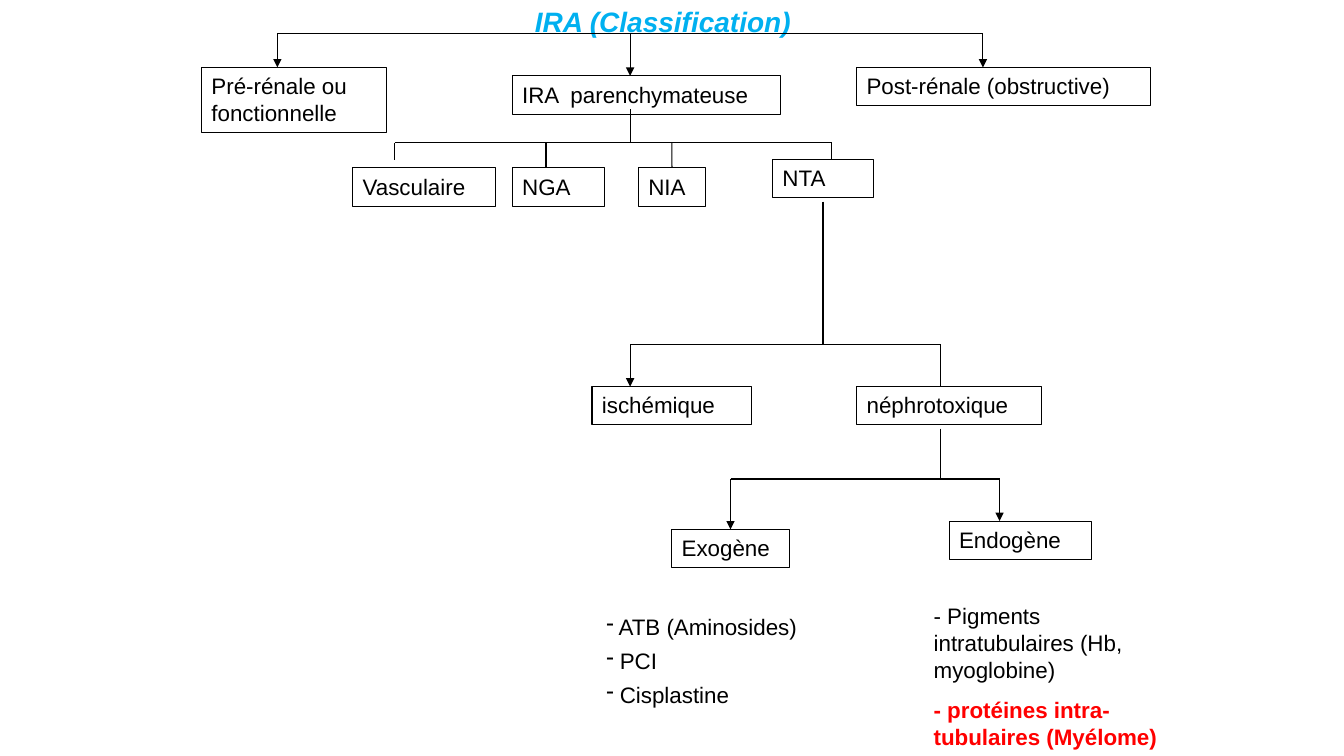
from dataclasses import dataclass

import pptx
import pptx.dml.color
import pptx.enum.shapes
import pptx.enum.text
import pptx.oxml
import pptx.util
from pptx.util import Cm

COLORS = {"black": "000000", "title": "00B0F0", "alert": "FF0000"}
LINE_HEIGHT = 0.97


@dataclass
class Branch:
    """A labelled box and its drop line, in cm relative to the region."""

    label: str
    left: float
    top: float
    width: float
    drop: float
    arrow: bool = True
    height: float = LINE_HEIGHT
    gap: float = 0


def rgb(name):
    """Return the named colour."""
    return pptx.dml.color.RGBColor.from_string(COLORS[name])


def style_paragraph(paragraph, color="black", size=16, bold=False, italic=False):
    """Set the font and left alignment of a paragraph."""
    paragraph.alignment = pptx.enum.text.PP_ALIGN.LEFT
    font = paragraph.font
    font.name = "Arial"
    font.size = pptx.util.Pt(size)
    font.bold = bold
    font.italic = italic
    font.color.rgb = rgb(color)


def prepare_frame(shape):
    """Wrap and top-anchor the text of a shape, and return its frame."""
    frame = shape.text_frame
    frame.word_wrap = True
    frame.auto_size = pptx.enum.text.MSO_AUTO_SIZE.SHAPE_TO_FIT_TEXT
    frame.vertical_anchor = pptx.enum.text.MSO_ANCHOR.TOP
    return frame


def add_text(slide, left, top, width, height, lines):
    """Add a text box of (text, style) lines and return its paragraphs."""
    shape = slide.shapes.add_textbox(Cm(left), Cm(top), Cm(width), Cm(height))
    frame = prepare_frame(shape)
    for index, (text, style) in enumerate(lines):
        paragraph = frame.add_paragraph() if index else frame.paragraphs[0]
        paragraph.text = text
        style_paragraph(paragraph, **style)
        if index:
            paragraph.space_before = pptx.util.Pt(9)
    return frame.paragraphs


def add_box(slide, left, top, width, height, label):
    """Add an outlined rectangle with a label."""
    shape = slide.shapes.add_shape(
        pptx.enum.shapes.MSO_SHAPE.RECTANGLE, Cm(left), Cm(top), Cm(width), Cm(height))
    shape.shadow.inherit = False
    shape.fill.background()
    shape.line.color.rgb = rgb("black")
    shape.line.width = pptx.util.Pt(0.75)
    frame = prepare_frame(shape)
    frame.text = label
    style_paragraph(frame.paragraphs[0])
    return shape


def add_line(slide, x1, y1, x2, y2, arrow=False):
    """Add a thin black line, with an arrowhead at its end if asked."""
    line = slide.shapes.add_connector(
        pptx.enum.shapes.MSO_CONNECTOR.STRAIGHT, Cm(x1), Cm(y1), Cm(x2), Cm(y2))
    line.line.color.rgb = rgb("black")
    line.line.width = pptx.util.Pt(0.75)
    properties = line._element.spPr
    if arrow:
        outline = line.line._get_or_add_ln()
        pptx.oxml.xmlchemy.OxmlElement("a:tailEnd")
        head = pptx.oxml.xmlchemy.OxmlElement("a:tailEnd")
        head.set("type", "triangle")
        outline.append(head)
    properties.append(pptx.oxml.xmlchemy.OxmlElement("a:effectLst"))
    return line


def add_fork(slide, left, top, bar, branches, stem=None):
    """Draw a stem, a bar at the given depth, and the branches below it."""
    if stem is not None:
        add_line(slide, left + stem, top, left + stem, top + bar)
    drops = [branch.drop for branch in branches]
    add_line(slide, left + min(drops), top + bar, left + max(drops), top + bar)
    for branch in branches:
        box = add_box(slide, left + branch.left, top + branch.top,
                      branch.width, branch.height, branch.label)
        x = left + branch.drop
        line = add_line(slide, x, top + bar, x, top + branch.top - branch.gap, branch.arrow)
        if abs(branch.left + branch.width / 2 - branch.drop) < 0.02:
            line.end_connect(box, 0)


def add_title(slide, left, top, width, height):
    """Place the slide title."""
    style = {"color": "title", "size": 20, "bold": True, "italic": True}
    add_text(slide, left, top, width, height, [("IRA (Classification)", style)])


def add_main_types(slide, left, top):
    """Place the three main types of renal failure."""
    add_fork(slide, left, top, 0, [
        Branch("Pré-rénale ou fonctionnelle", 0, 0.85, 4.66, 1.91, height=1.65),
        Branch("IRA  parenchymateuse", 7.83, 1.06, 6.77, 10.8),
        Branch("Post-rénale (obstructive)", 16.51, 0.85, 7.41, 19.69),
    ])


def add_parenchymal_types(slide, left, top):
    """Place the four parenchymal types."""
    add_fork(slide, left, top, 0.85, [
        Branch("Vasculaire", 0, 1.48, 3.6, 1.06, False, gap=0.21),
        Branch("NGA", 4.02, 1.48, 2.33, 4.87, False),
        Branch("NIA", 7.2, 1.48, 1.69, 8.04, False),
        Branch("NTA", 10.58, 1.27, 2.54, 12.07, False),
    ], stem=6.99)


def add_tubular_causes(slide, left, top):
    """Place the two causes of tubular necrosis."""
    add_fork(slide, left, top, 3.6, [
        Branch("ischémique", 0, 4.66, 4.02, 0.96),
        Branch("néphrotoxique", 6.67, 4.66, 4.66, 8.79, False),
    ], stem=5.82)


def add_nephrotoxic_sources(slide, left, top):
    """Place the nephrotoxic sources with their lists of agents."""
    add_fork(slide, left, top, 1.27, [
        Branch("Exogène", 1.9, 2.54, 2.96, 3.38),
        Branch("Endogène", 8.89, 2.33, 3.6, 10.16),
    ], stem=8.68)
    agents = [(text, {}) for text in (" ATB (Aminosides)", " PCI", " Cisplastine")]
    for paragraph in add_text(slide, left, top + 4.65, 6.35, 2.57, agents):
        paragraph.line_spacing = 0.8
        bullet = pptx.oxml.xmlchemy.OxmlElement("a:buChar")
        bullet.set("char", "-")
        paragraph._p.get_or_add_pPr().insert_element_before(
            bullet, "a:tabLst", "a:defRPr", "a:extLst")
    add_text(slide, left + 8.25, top + 4.26, 6.35, 3.99, [
        ("- Pigments intratubulaires (Hb, myoglobine)", {}),
        ("- protéines intra-tubulaires (Myélome)", {"color": "alert", "bold": True}),
    ])


def main():
    """Build and save the presentation."""
    presentation = pptx.Presentation()
    presentation.slide_width = Cm(33.87)
    presentation.slide_height = Cm(19.05)
    slide = presentation.slides.add_slide(presentation.slide_layouts[6])
    add_title(slide, 13.23, 0, 7.42, 1.12)
    add_main_types(slide, 5.08, 0.85)
    add_parenchymal_types(slide, 8.89, 2.75)
    add_tubular_causes(slide, 14.92, 5.08)
    add_nephrotoxic_sources(slide, 15.03, 10.8)
    presentation.save("out.pptx")


if __name__ == "__main__":
    main()
